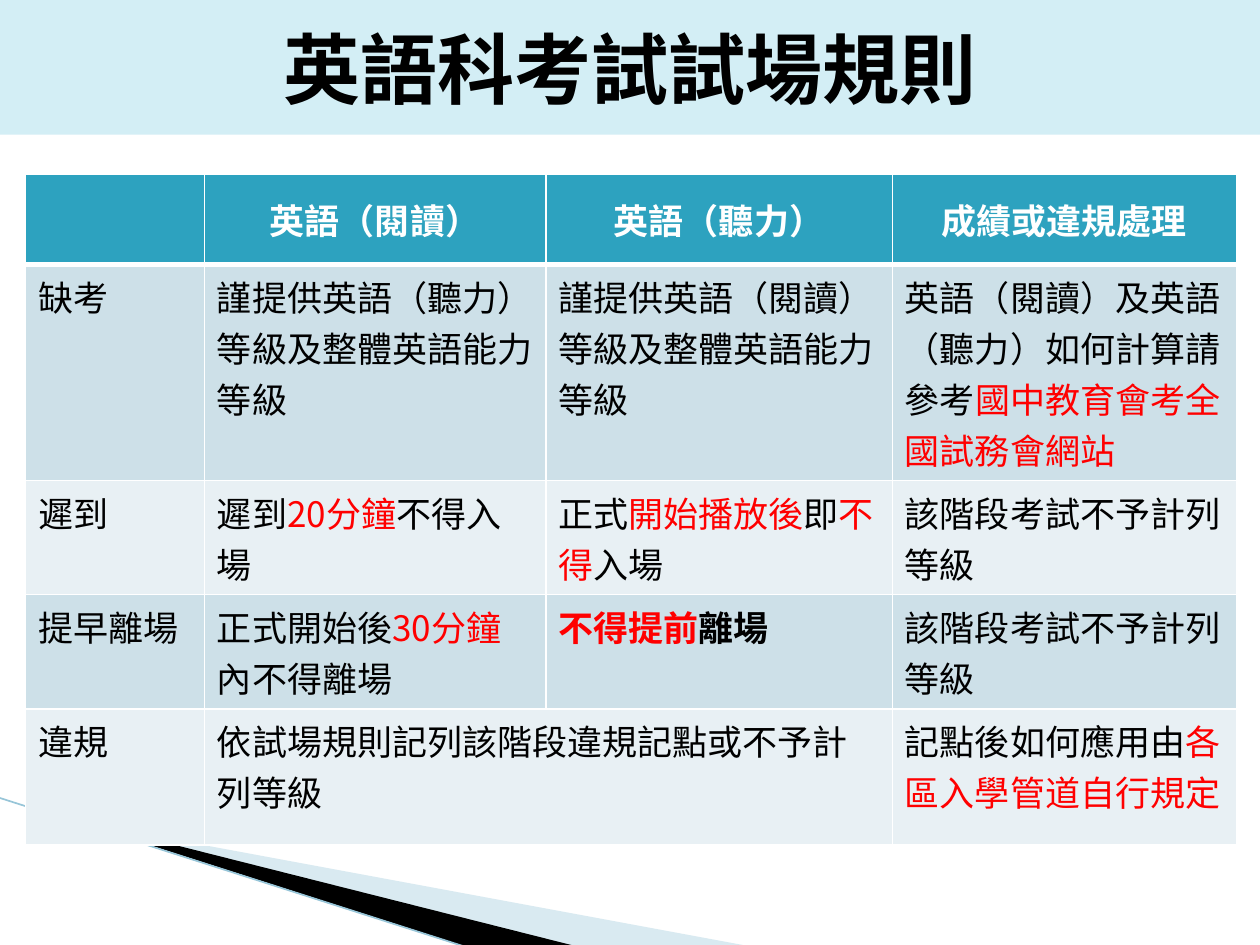
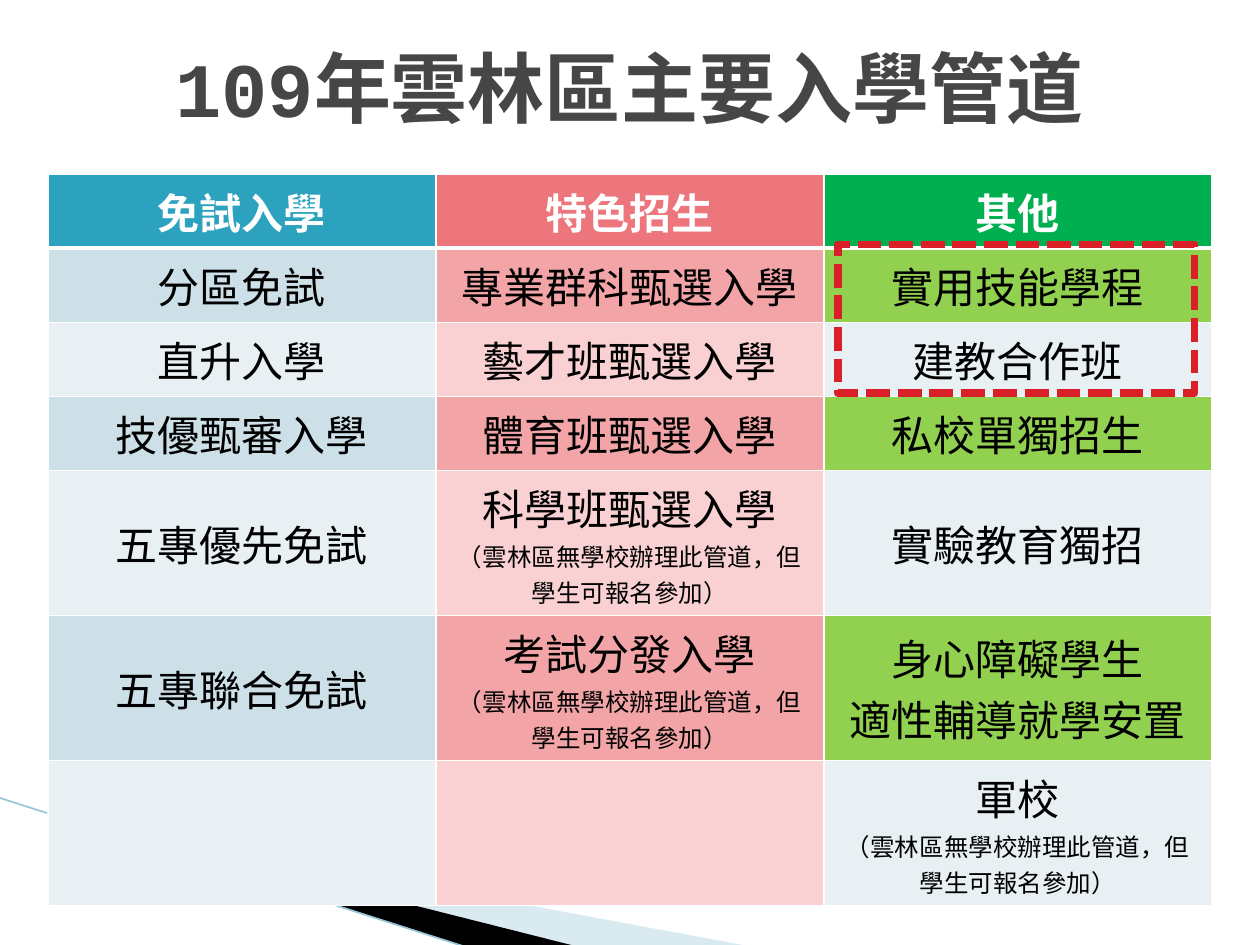
from lxml import etree
from pptx import Presentation
from pptx.dml.color import RGBColor
from pptx.enum.dml import MSO_LINE
from pptx.enum.shapes import MSO_CONNECTOR, MSO_SHAPE
from pptx.enum.text import MSO_ANCHOR, MSO_AUTO_SIZE, PP_ALIGN
from pptx.oxml.ns import qn
from pptx.util import Pt

STRAIGHT, RECTANGLE, DASH = MSO_CONNECTOR.STRAIGHT, MSO_SHAPE.RECTANGLE, MSO_LINE.SQUARE_DOT
TOP, MIDDLE, NO_FIT = MSO_ANCHOR.TOP, MSO_ANCHOR.MIDDLE, MSO_AUTO_SIZE.NONE
LEFT, CENTER = PP_ALIGN.LEFT, PP_ALIGN.CENTER

# Shared look
CJK = "Noto Sans CJK SC"
WHITE, BLACK, RED = "FFFFFF", "000000", "FF0000"
TEAL, TEAL_BANDS = "2DA2BF", ("CDE0E8", "E8F0F4")
PINK, PINK_BANDS = "EC767C", ("F2A4A7", "F9D1D3")
GREEN, GREEN_BANDS = "00B050", ("92D050", "E8F0F4")
TABLE_TOP = 99.4

# Corner swoosh: outline, colour, opacity in percent
SWOOSH = [
    ([(39.6, 468.7), (428.4, 540.7), (328.3, 540.7), (39.6, 468)], "A0CBDC", 40),
    ([(38.2, 467.3), (329, 540.7), (267.8, 541.4), (38.9, 468)], BLACK, 100),
]
SWOOSH_EDGE = (-0.7, 455.8, 267.1, 541.4)

# Content: text between asterisks is red, a line break starts a paragraph
NOTE = "（雲林區無學校辦理此管道，但學生可報名參加）"
RULES = {
    "rows": [
        ["", "英語（閱讀）", "英語（聽力）", "成績或違規處理"],
        ["缺考", "謹提供英語（聽力）等級及整體英語能力等級",
         "謹提供英語（閱讀）等級及整體英語能力等級",
         "英語（閱讀）及英語（聽力）如何計算請參考*國中教育會考全國試務會網站*"],
        ["遲到", "遲到*20分鐘*不得入場", "正式*開始播放後*即*不得*入場",
         "該階段考試不予計列等級"],
        ["提早離場", "正式開始後*30分鐘*內不得離場", "*不得提前*離場",
         "該階段考試不予計列等級"],
        ["違規", "依試場規則記列該階段違規記點或不予計列等級", "",
         "記點後如何應用由*各區入學管道自行規定*"],
    ],
    "left": 14.6, "widths": [102.2, 195.1, 198, 196.6],
    "heights": [51.8, 101.5, 54.7, 54.7, 77.8],
    "headers": [TEAL] * 4, "bands": [TEAL_BANDS] * 4,
    "size": 20, "body": (LEFT, TOP), "bold": {(3, 2)}, "merge": ((4, 1), (4, 2)),
}
PATHWAYS = {
    "rows": [
        ["免試入學", "特色招生", "其他"],
        ["分區免試", "專業群科甄選入學", "實用技能學程"],
        ["直升入學", "藝才班甄選入學", "建教合作班"],
        ["技優甄審入學", "體育班甄選入學", "私校單獨招生"],
        ["五專優先免試", f"科學班甄選入學\n{NOTE}", "實驗教育獨招"],
        ["五專聯合免試", f"考試分發入學\n{NOTE}", "身心障礙學生\n適性輔導就學安置"],
        ["", "", f"軍校\n{NOTE}"],
    ],
    "left": 27.4, "widths": [221.7] * 3, "heights": [42.4] * 7,
    "headers": [TEAL, PINK, GREEN], "bands": [TEAL_BANDS, PINK_BANDS, GREEN_BANDS],
    "size": 24, "body": (CENTER, MIDDLE), "bold": set(), "merge": None,
}
VOCATIONAL_FRAME = (478.8, 139.7, 203.8, 85)


def color(value):
    return RGBColor.from_string(value)


def paint(target, value):
    target.fill.solid()
    target.fill.fore_color.rgb = color(value)


def add_run(paragraph, text, size, ink, bold, latin=CJK):
    run = paragraph.add_run()
    run.text = text
    for key, value in {"size": Pt(size), "bold": bold, "name": latin}.items():
        setattr(run.font, key, value)
    run.font.color.rgb = color(ink)
    etree.SubElement(run.font._element, qn("a:ea")).set("typeface", CJK)


def add_swoosh(slide):
    for outline, tint, opacity in SWOOSH:
        points = [(Pt(x), Pt(y)) for x, y in outline]
        builder = slide.shapes.build_freeform(*points[0])
        builder.add_line_segments(points[1:], close=True)
        wedge = builder.convert_to_shape()
        wedge.shadow.inherit = False
        wedge.line.fill.background()
        paint(wedge, tint)
        if opacity < 100:
            fill_color = wedge._element.spPr.find(".//" + qn("a:srgbClr"))
            etree.SubElement(fill_color, qn("a:alpha")).set("val", str(opacity * 1000))
    edge = slide.shapes.add_connector(STRAIGHT, *map(Pt, SWOOSH_EDGE))
    edge.line.color.rgb = color("97C5D8")
    edge.line.width = Pt(0.95)
    etree.SubElement(edge._element.spPr, qn("a:effectLst"))


def add_slide(deck, heading, box, ink, latin=CJK, band=None):
    slide = deck.slides.add_slide(deck.slide_layouts[5])
    add_swoosh(slide)
    title = slide.shapes.title
    for key, value in zip(("left", "top", "width", "height"), box):
        setattr(title, key, Pt(value))
    frame = title.text_frame
    for key, value in {"word_wrap": True, "auto_size": NO_FIT,
                       "vertical_anchor": MIDDLE}.items():
        setattr(frame, key, value)
    frame.paragraphs[0].alignment = CENTER
    add_run(frame.paragraphs[0], heading, 44, ink, True, latin)
    if band:
        paint(title, band)
    return slide


def add_borders(cell, row):
    # The rule under the header row is thicker
    widths = {"L": 1, "R": 1, "T": 3 if row == 1 else 1, "B": 3 if row == 0 else 1}
    for side, width in widths.items():
        border = etree.SubElement(cell._tc.get_or_add_tcPr(), qn("a:ln" + side))
        border.set("w", str(Pt(width)))
        fill = etree.SubElement(border, qn("a:solidFill"))
        etree.SubElement(fill, qn("a:srgbClr")).set("val", WHITE)


def fill_cell(cell, text, row, column, data):
    header = row == 0
    align, anchor = (CENTER, MIDDLE) if header else data["body"]
    ink = WHITE if header else BLACK
    bold = header or (row, column) in data["bold"]
    add_borders(cell, row)
    paint(cell, data["headers"][column] if header else data["bands"][column][(row - 1) % 2])
    cell.vertical_anchor = anchor
    for index, line in enumerate(text.split("\n")):
        frame = cell.text_frame
        paragraph = frame.add_paragraph() if index else frame.paragraphs[0]
        paragraph.alignment = align
        for part, words in enumerate(line.split("*")):
            if words:
                add_run(paragraph, words, 14 if line == NOTE else data["size"],
                        RED if part % 2 else ink, bold)


def add_grid(slide, data):
    rows, widths, heights = data["rows"], data["widths"], data["heights"]
    table = slide.shapes.add_table(
        len(rows), len(widths), Pt(data["left"]), Pt(TABLE_TOP),
        Pt(sum(widths)), Pt(sum(heights))).table
    for column, width in zip(table.columns, widths):
        column.width = Pt(width)
    for row, height in zip(table.rows, heights):
        row.height = Pt(height)
    for r, texts in enumerate(rows):
        for c, text in enumerate(texts):
            fill_cell(table.cell(r, c), text, r, c, data)
    if data["merge"]:
        first, last = data["merge"]
        table.cell(*first).merge(table.cell(*last))


def main():
    deck = Presentation()
    deck.slide_width, deck.slide_height = Pt(720), Pt(540)

    # English exam room rules
    rules = add_slide(deck, "英語科考試試場規則", (0, 0, 720, 77), BLACK, band="D3EEF5")
    add_grid(rules, RULES)

    # Admission pathways, with two vocational ones framed
    pathways = add_slide(deck, "109年雲林區主要入學管道", (0, 0, 720, 99.4), "464646",
                         latin="Courier New")
    add_grid(pathways, PATHWAYS)
    frame = pathways.shapes.add_shape(RECTANGLE, *map(Pt, VOCATIONAL_FRAME))
    frame.shadow.inherit = False
    frame.fill.background()
    frame.line.color.rgb = color("DA1F28")
    frame.line.width = Pt(4.5)
    frame.line.dash_style = DASH

    deck.save("out.pptx")


if __name__ == "__main__":
    main()
